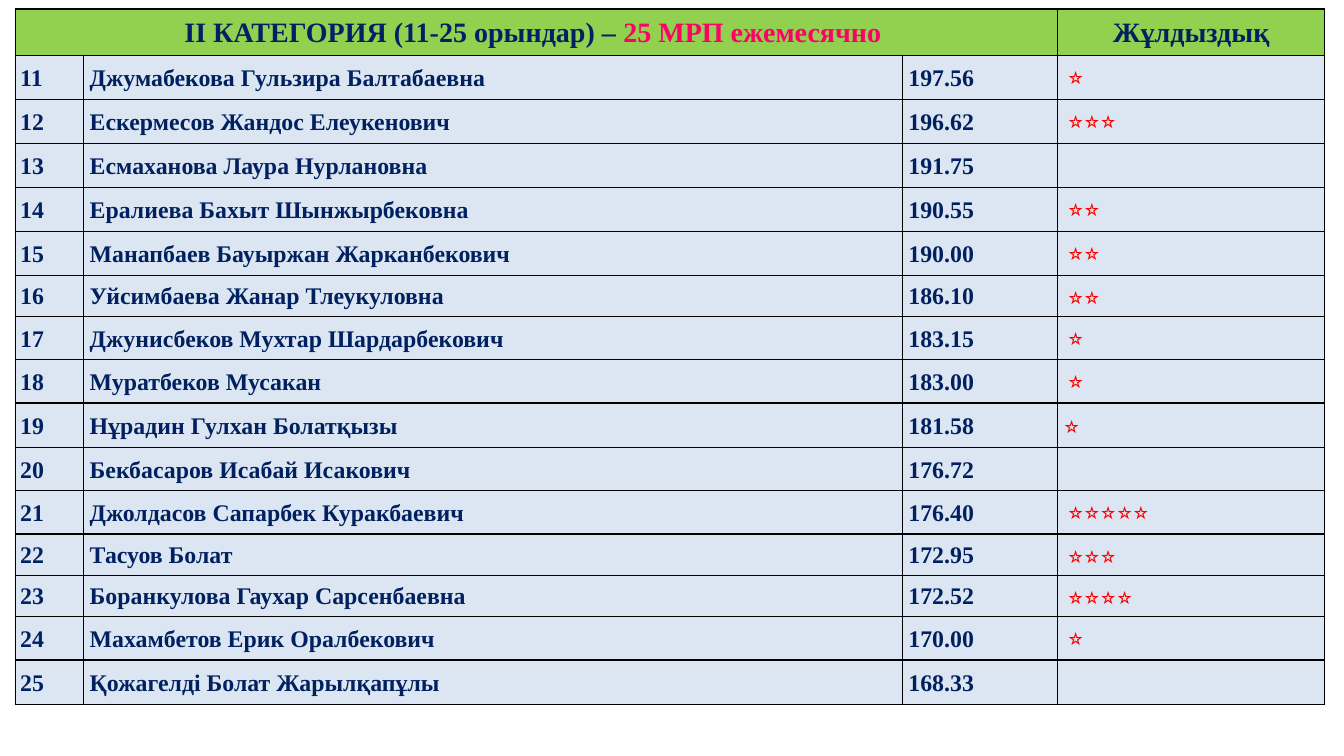
from lxml import etree
from pptx import Presentation
from pptx.dml.color import RGBColor
from pptx.enum.text import MSO_ANCHOR as ANCHOR, PP_ALIGN as ALIGN
from pptx.oxml.ns import qn
from pptx.util import Inches, Pt

SERIF = "Times New Roman"
NAVY, INDEX_NAVY, PINK, RED = "002060", "002164", "FF0066", "FF0000"
GREEN, PALE_BLUE, BLACK = "92D050", "DCE6F2", "000000"
COL_WIDTHS = [0.68, 8.12, 1.54, 2.65]
ROW_HEIGHTS = [0.46, 0.44, 0.43, 0.44, 0.44, 0.43, 0.41, 0.43,
               0.43, 0.44, 0.43, 0.43, 0.40, 0.41, 0.43, 0.44]
FIRST_PLACE = 11
STAR = "⭐"
# name, score, number of stars
WINNERS = [
    ("Джумабекова Гульзира Балтабаевна", "197.56", 1),
    ("Ескермесов Жандос Елеукенович", "196.62", 3),
    ("Есмаханова Лаура Нурлановна", "191.75", 0),
    ("Ералиева Бахыт Шынжырбековна", "190.55", 2),
    ("Манапбаев Бауыржан Жарканбекович", "190.00", 2),
    ("Уйсимбаева Жанар Тлеукуловна", "186.10", 2),
    ("Джунисбеков Мухтар Шардарбекович", "183.15", 1),
    ("Муратбеков Мусакан", "183.00", 1),
    ("Нұрадин Гулхан Болатқызы", "181.58", 1),
    ("Бекбасаров Исабай Исакович", "176.72", 0),
    ("Джолдасов Сапарбек Куракбаевич", "176.40", 5),
    ("Тасуов Болат", "172.95", 3),
    ("Боранкулова Гаухар Сарсенбаевна", "172.52", 4),
    ("Махамбетов Ерик Оралбекович", "170.00", 1),
    ("Қожагелді Болат Жарылқапұлы", "168.33", 0),
]
CENTRED_STARS_PLACE = 19


def rgb(color):
    return RGBColor.from_string(color)


def add_borders(cell):
    tc_pr = cell._tc.get_or_add_tcPr()
    for i, side in enumerate(("a:lnL", "a:lnR", "a:lnT", "a:lnB")):
        ln = etree.Element(qn(side), w=str(Pt(0.96)))
        fill = etree.SubElement(ln, qn("a:solidFill"))
        etree.SubElement(fill, qn("a:srgbClr"), val=BLACK)
        tc_pr.insert(i, ln)


def style_cell(cell, color):
    cell.fill.solid()
    cell.fill.fore_color.rgb = rgb(color)
    add_borders(cell)


def write_cell(cell, runs, size=17, font=SERIF, bold=True, inset=0.06,
               align=ALIGN.LEFT, anchor=ANCHOR.MIDDLE):
    """Write (text, colour) runs into a cell."""
    cell.margin_left = cell.margin_right = Inches(inset)
    cell.margin_top = cell.margin_bottom = Inches(0.05)
    cell.vertical_anchor = anchor
    p = cell.text_frame.paragraphs[0]
    p.alignment = align
    p.line_spacing = 1.07
    for text, color in runs:
        r = p.add_run()
        r.text = text
        r.font.name = font
        r.font.size = Pt(size)
        r.font.bold = bold
        r.font.color.rgb = rgb(color)


def write_stars(cell, count, place):
    if place == CENTRED_STARS_PLACE:
        inset, anchor = 0.06, ANCHOR.MIDDLE
    else:
        inset, anchor = 0.1, ANCHOR.TOP
    write_cell(cell, [(STAR * count, RED)], font="Cabin", bold=False,
               inset=inset, anchor=anchor)


def add_ranking_table(s):
    table = s.shapes.add_table(
        len(ROW_HEIGHTS), len(COL_WIDTHS), Inches(0.15), Inches(0.09),
        Inches(sum(COL_WIDTHS)), Inches(sum(ROW_HEIGHTS))).table
    for column, width in zip(table.columns, COL_WIDTHS):
        column.width = Inches(width)
    for i, (row, height) in enumerate(zip(table.rows, ROW_HEIGHTS)):
        row.height = Inches(height)
        for cell in row.cells:
            style_cell(cell, PALE_BLUE if i else GREEN)
    return table


def fill_header(table):
    table.cell(0, 0).merge(table.cell(0, 2))
    headings = {0: [("ІІ КАТЕГОРИЯ (11-25 орындар) – ", INDEX_NAVY),
                    ("25 МРП ежемесячно ", PINK)],
                3: [("Жұлдыздық", NAVY)]}
    for col, runs in headings.items():
        write_cell(table.cell(0, col), runs, size=20, inset=0.05,
                   align=ALIGN.CENTER)


def fill_winners(table):
    for row, (name, score, stars) in enumerate(WINNERS, start=1):
        place = FIRST_PLACE + row - 1
        write_cell(table.cell(row, 0), [(str(place), INDEX_NAVY)], inset=0.05)
        write_cell(table.cell(row, 1), [(name, NAVY)])
        write_cell(table.cell(row, 2), [(score, NAVY)])
        if stars:
            write_stars(table.cell(row, 3), stars, place)


def main():
    prs = Presentation()
    prs.slide_width, prs.slide_height = Inches(13.33), Inches(7.5)
    s = prs.slides.add_slide(prs.slide_layouts[6])
    table = add_ranking_table(s)
    fill_header(table)
    fill_winners(table)
    prs.save("out.pptx")


if __name__ == "__main__":
    main()
